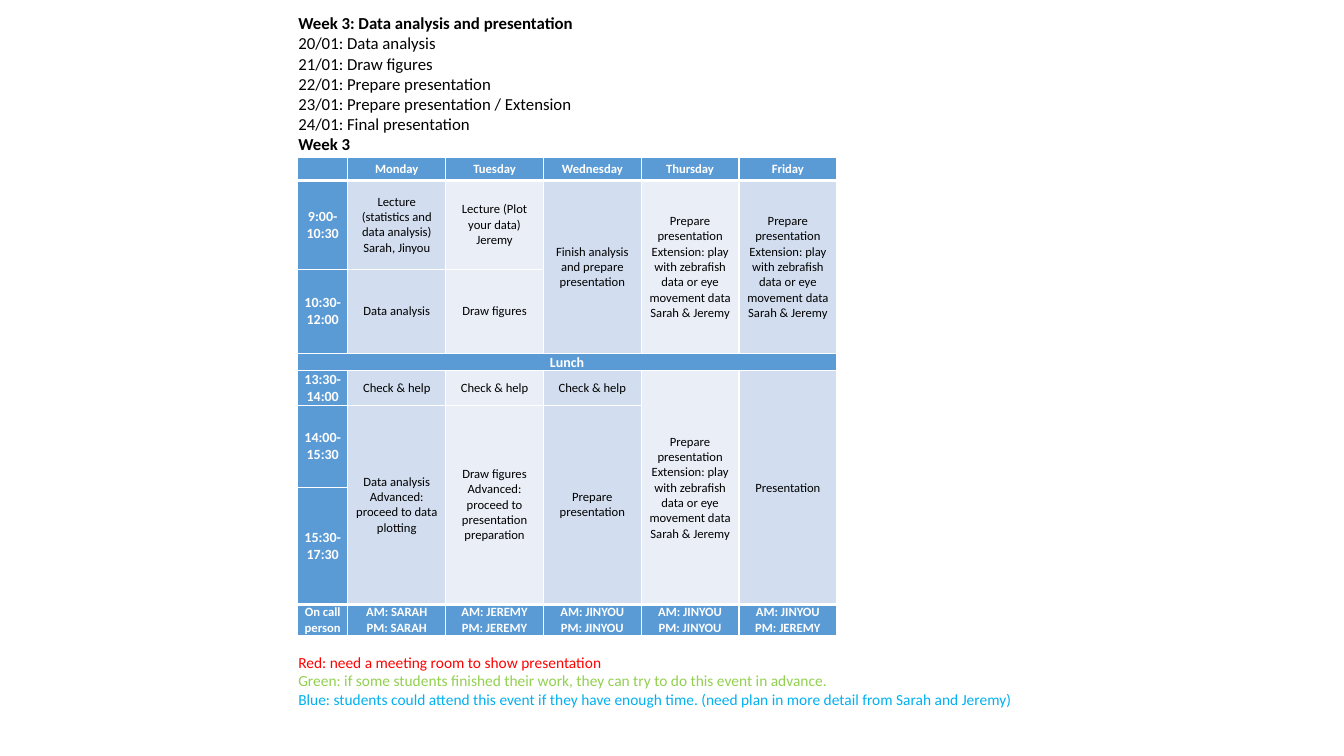
from lxml.etree import SubElement
from pptx import Presentation
from pptx.dml.color import RGBColor
from pptx.enum.text import MSO_ANCHOR, PP_ALIGN
from pptx.oxml.ns import qn
from pptx.util import Inches, Pt

FONT = "Calibri"
COLORS = {
    "head": "5B9BD5",
    "dark": "D2DEEF",
    "light": "EAEFF7",
    "white": "FFFFFF",
    "black": "000000",
    "red": "FF0000",
    "green": "92D050",
    "blue": "00B0F0",
}
COLS = [0.5] + [0.97] * 5
ROWS = [0.23, 0.88, 0.84, 0.17, 0.34, 0.82, 1.16, 0.31]
DAYS = ["Monday", "Tuesday", "Wednesday", "Thursday", "Friday"]
TIMES = {
    1: "9:00-10:30",
    2: "10:30-12:00",
    3: "Lunch",
    4: "13:30-14:00",
    5: "14:00-15:30",
    6: "15:30-17:30",
}
CALLS = [
    ("SARAH", "SARAH"),
    ("JEREMY", "JEREMY"),
    ("JINYOU", "JINYOU"),
    ("JINYOU", "JINYOU"),
    ("JINYOU", "JEREMY"),
]
EXTRA = [
    "Prepare presentation",
    "Extension: play with zebrafish data or eye movement data",
    "Sarah & Jeremy",
]
EVENTS = {
    (1, 1): ["Lecture (statistics and data analysis)", "Sarah, Jinyou"],
    (1, 2): ["Lecture (Plot your data)", "Jeremy"],
    (1, 3): ["Finish analysis and prepare presentation"],
    (1, 4): EXTRA,
    (1, 5): EXTRA,
    (2, 1): ["Data analysis"],
    (2, 2): ["Draw figures"],
    (4, 1): ["Check & help"],
    (4, 2): ["Check & help"],
    (4, 3): ["Check & help"],
    (4, 4): EXTRA,
    (4, 5): ["Presentation"],
    (5, 1): ["Data analysis", "Advanced: proceed to data plotting"],
    (5, 2): ["Draw figures Advanced: proceed to presentation preparation"],
    (5, 3): ["Prepare presentation"],
}
SPANS = [
    (1, 3, 2, 3), (1, 4, 2, 4), (1, 5, 2, 5),
    (3, 0, 3, 5),
    (4, 4, 6, 4), (4, 5, 6, 5),
    (5, 1, 6, 1), (5, 2, 6, 2), (5, 3, 6, 3),
]
PLAN = [
    ("Week 3: Data analysis and presentation", "black", True),
    ("20/01: Data analysis", "black", False),
    ("21/01: Draw figures", "black", False),
    ("22/01: Prepare presentation", "black", False),
    ("23/01: Prepare presentation / Extension", "black", False),
    ("24/01: Final presentation", "black", False),
    ("Week 3", "black", True),
]
NOTES = [
    ("Red: need a meeting room to show presentation", "red", False),
    ("Green: if some students finished their work, they can try to do this event in advance.",
     "green", False),
    ("Blue: students could attend this event if they have enough time. "
     "(need plan in more detail from Sarah and Jeremy)", "blue", False),
]


def color(name):
    return RGBColor.from_string(COLORS[name])


def write(frame, lines, size, align):
    for i, (text, tint, bold) in enumerate(lines):
        para = frame.add_paragraph() if i else frame.paragraphs[0]
        para.alignment = align
        run = para.add_run()
        run.text = text
        run.font.name = FONT
        run.font.size = Pt(size)
        run.font.bold = bold
        run.font.color.rgb = color(tint)


def add_lines(slide, box, lines, size):
    frame = slide.shapes.add_textbox(*map(Inches, box)).text_frame
    frame.word_wrap = True
    write(frame, lines, size, PP_ALIGN.LEFT)


def add_edges(cell, row):
    props = cell._tc.get_or_add_tcPr()
    last = len(ROWS) - 1
    thick = {"T": row in (1, last), "B": row in (0, last - 1)}
    for side in "LRTB":
        width = Pt(3 if thick.get(side) else 1)
        line = SubElement(props, qn(f"a:ln{side}"), w=str(width))
        fill = SubElement(line, qn("a:solidFill"))
        SubElement(fill, qn("a:srgbClr"), val=COLORS["white"])


def get_text(row, col):
    if row == 0:
        return [DAYS[col - 1]] if col else []
    if row == len(ROWS) - 1:
        if col == 0:
            return ["On call person"]
        return [f"{part}: {name}" for part, name in zip(("AM", "PM"), CALLS[col - 1])]
    if col == 0:
        return [TIMES[row]]
    return EVENTS.get((row, col), [])


def fill_cell(cell, row, col):
    edge = row in (0, len(ROWS) - 1)
    head = edge or row == 3 or col == 0
    cell.margin_left = cell.margin_right = Inches(0.06)
    cell.margin_top = cell.margin_bottom = 0
    cell.vertical_anchor = MSO_ANCHOR.MIDDLE
    add_edges(cell, row)
    cell.fill.solid()
    cell.fill.fore_color.rgb = color("head" if head else "dark" if col % 2 else "light")
    size = 10 if head and not edge else 9
    lines = [(text, "white" if head else "black", head) for text in get_text(row, col)]
    write(cell.text_frame, lines, size, PP_ALIGN.CENTER)
    if not lines:
        SubElement(cell.text_frame.paragraphs[0]._p, qn("a:endParaRPr"), sz=str(size * 100))


def add_grid(slide, box):
    shape = slide.shapes.add_table(len(ROWS), len(COLS), *map(Inches, box))
    table = shape.table
    table.first_row = table.horz_banding = False
    for col, width in zip(table.columns, COLS):
        col.width = Inches(width)
    for row, height in zip(table.rows, ROWS):
        row.height = Inches(height)
    for r in range(len(ROWS)):
        for c in range(len(COLS)):
            fill_cell(table.cell(r, c), r, c)
    for top, left, low, right in SPANS:
        table.cell(top, left).merge(table.cell(low, right))


def add_week(slide, box):
    left, top, width, height = box
    add_lines(slide, (left, top, width, 1.52), PLAN, 12)
    add_grid(slide, (left + 0.09, top + 1.48, sum(COLS), sum(ROWS)))
    add_lines(slide, (left, top + height - 0.66, width, 0.66), NOTES, 11)


def main():
    deck = Presentation()
    deck.slide_width = Inches(13.33)
    deck.slide_height = Inches(7.5)
    slide = deck.slides.add_slide(deck.slide_layouts[6])
    add_week(slide, (2.86, 0.08, 7.35, 7.01))
    deck.save("out.pptx")


if __name__ == "__main__":
    main()
